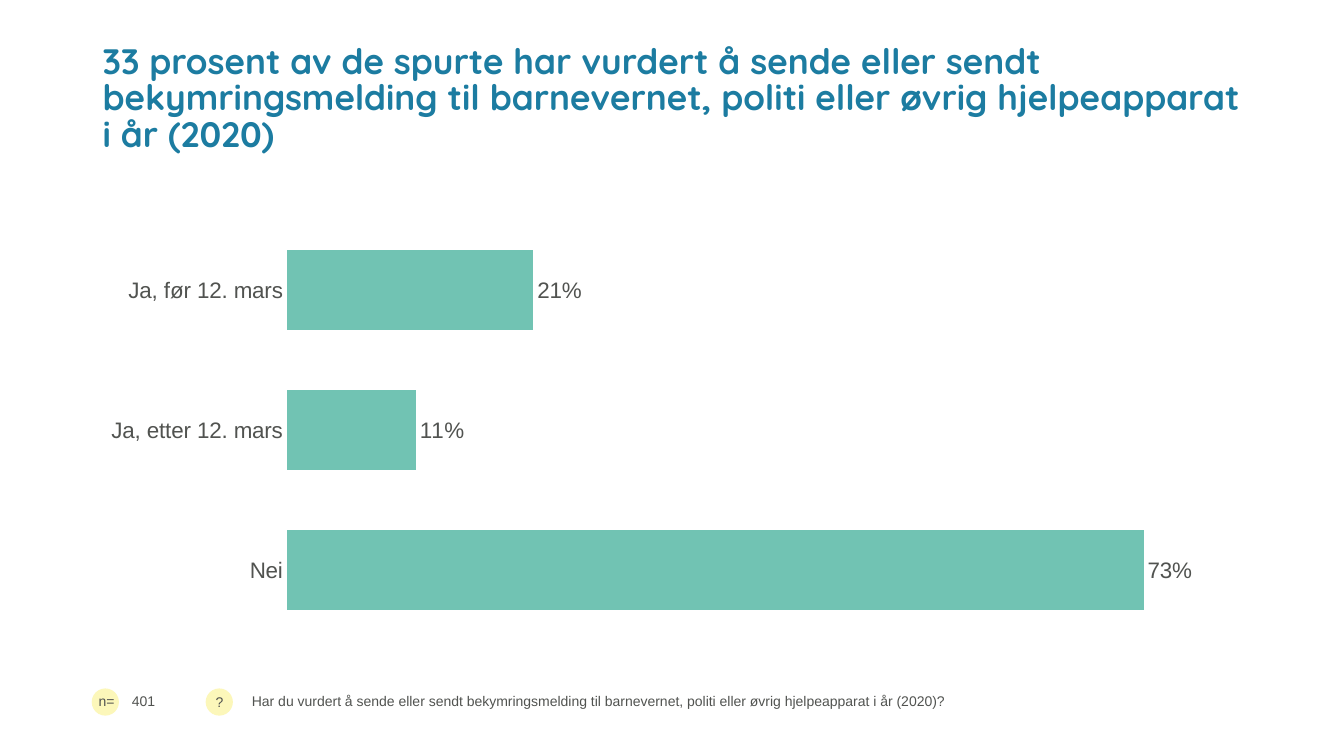
from dataclasses import dataclass

from lxml import etree
from pptx import Presentation
from pptx import util as u
from pptx.chart import data as chart_data
from pptx.dml import color
from pptx.enum import chart as chart_enum, shapes, text
from pptx.oxml import ns


@dataclass(frozen=True)
class Theme:
    heading: str = "1C7CA1"
    body: str = "515350"
    bar: str = "71C3B3"
    badge: str = "FCF7BA"
    heading_font: str = "Quicksand"
    body_font: str = "Arial"
    heading_size: float = 25.2
    label_size: float = 16
    note_size: float = 10


THEME = Theme()
NOTE_TOP = 6.83
NOTE_HEIGHT = 0.27


def rgb(value):
    return color.RGBColor.from_string(value)


def style_font(font, size, name=THEME.body_font, fill=THEME.body, bold=False):
    font.size = u.Pt(size)
    font.name = name
    font.bold = bold
    font.color.rgb = rgb(fill)


def add_text(slide, content, left, top, width, height, size=THEME.note_size,
             anchor=text.MSO_ANCHOR.TOP, spacing=1.0, **font_format):
    shape = slide.shapes.add_textbox(
        u.Inches(left), u.Inches(top), u.Inches(width), u.Inches(height))
    frame = shape.text_frame
    frame.word_wrap = True
    frame.vertical_anchor = anchor
    paragraph = frame.paragraphs[0]
    paragraph.line_spacing = spacing
    run = paragraph.add_run()
    run.text = content
    style_font(run.font, size, **font_format)


def add_badge(slide, left):
    shape = slide.shapes.add_shape(
        shapes.MSO_SHAPE.OVAL, u.Inches(left), u.Inches(NOTE_TOP),
        u.Inches(NOTE_HEIGHT), u.Inches(NOTE_HEIGHT))
    shape.shadow.inherit = False
    shape.fill.solid()
    shape.fill.fore_color.rgb = rgb(THEME.badge)
    shape.line.fill.background()


def place_plot(chart, **fractions):
    plot_area = chart.plots[0]._element.getparent()
    for existing in plot_area.findall(ns.qn("c:layout")):
        plot_area.remove(existing)
    layout = etree.Element(ns.qn("c:layout"))
    plot_area.insert(0, layout)
    manual = etree.SubElement(layout, ns.qn("c:manualLayout"))
    settings = {"layoutTarget": "inner", "xMode": "edge", "yMode": "edge", **fractions}
    for tag, value in settings.items():
        etree.SubElement(manual, ns.qn(f"c:{tag}")).set("val", str(value))


def add_answer_chart(slide, answers):
    source = chart_data.CategoryChartData(number_format="0%")
    source.categories = list(answers)
    source.add_series("Series 1", list(answers.values()))
    chart = slide.shapes.add_chart(
        chart_enum.XL_CHART_TYPE.BAR_CLUSTERED, u.Inches(0.89), u.Inches(2.1),
        u.Inches(11.5), u.Inches(4.34), source).chart
    chart.has_legend = False
    chart.has_title = False
    style_font(chart.font, THEME.label_size)

    categories = chart.category_axis
    categories.reverse_order = True
    categories.major_tick_mark = chart_enum.XL_TICK_MARK.NONE
    categories.format.line.fill.background()
    style_font(categories.tick_labels.font, THEME.label_size)

    values = chart.value_axis
    values.minimum_scale = 0
    values.maximum_scale = 0.8
    values.major_unit = 0.2
    values.has_major_gridlines = False
    values.visible = False

    plot = chart.plots[0]
    plot.gap_width = 75
    plot.vary_by_categories = False
    series = plot.series[0]
    series.format.fill.solid()
    series.format.fill.fore_color.rgb = rgb(THEME.bar)
    labels = series.data_labels
    labels.show_value = True
    labels.number_format = "0%"
    labels.number_format_is_linked = False
    labels.position = chart_enum.XL_LABEL_POSITION.OUTSIDE_END
    style_font(labels.font, THEME.label_size)
    place_plot(chart, x=0.17, y=0.02, w=0.81, h=0.96)


def add_note(slide, symbol, note, badge_left, symbol_box, note_box):
    add_badge(slide, badge_left)
    symbol_left, symbol_top, symbol_width = symbol_box
    add_text(slide, symbol, symbol_left, symbol_top, symbol_width, NOTE_HEIGHT)
    note_left, note_width = note_box
    add_text(slide, note, note_left, NOTE_TOP, note_width, NOTE_HEIGHT,
             anchor=text.MSO_ANCHOR.MIDDLE, spacing=0.9)


def main():
    presentation = Presentation()
    presentation.slide_width = u.Inches(13.33)
    presentation.slide_height = u.Inches(7.5)
    slide = presentation.slides.add_slide(presentation.slide_layouts[6])
    add_text(slide, "33 prosent av de spurte har vurdert å sende eller sendt "
             "bekymringsmelding til barnevernet, politi eller øvrig hjelpeapparat i år (2020)",
             0.92, 0.4, 11.5, 1.08, size=THEME.heading_size, spacing=0.86,
             name=THEME.heading_font, fill=THEME.heading, bold=True)
    add_answer_chart(slide, {"Ja, før 12. mars": 0.21, "Ja, etter 12. mars": 0.11, "Nei": 0.73})
    add_note(slide, "n=", "401", 0.91, (0.88, 6.82, 0.45), (1.21, 0.74))
    add_note(slide, "?", "Har du vurdert å sende eller sendt bekymringsmelding til "
             "barnevernet, politi eller øvrig hjelpeapparat i år (2020)?",
             2.04, (2.04, 6.83, 0.25), (2.4, 9.91))
    presentation.save("out.pptx")


if __name__ == "__main__":
    main()
